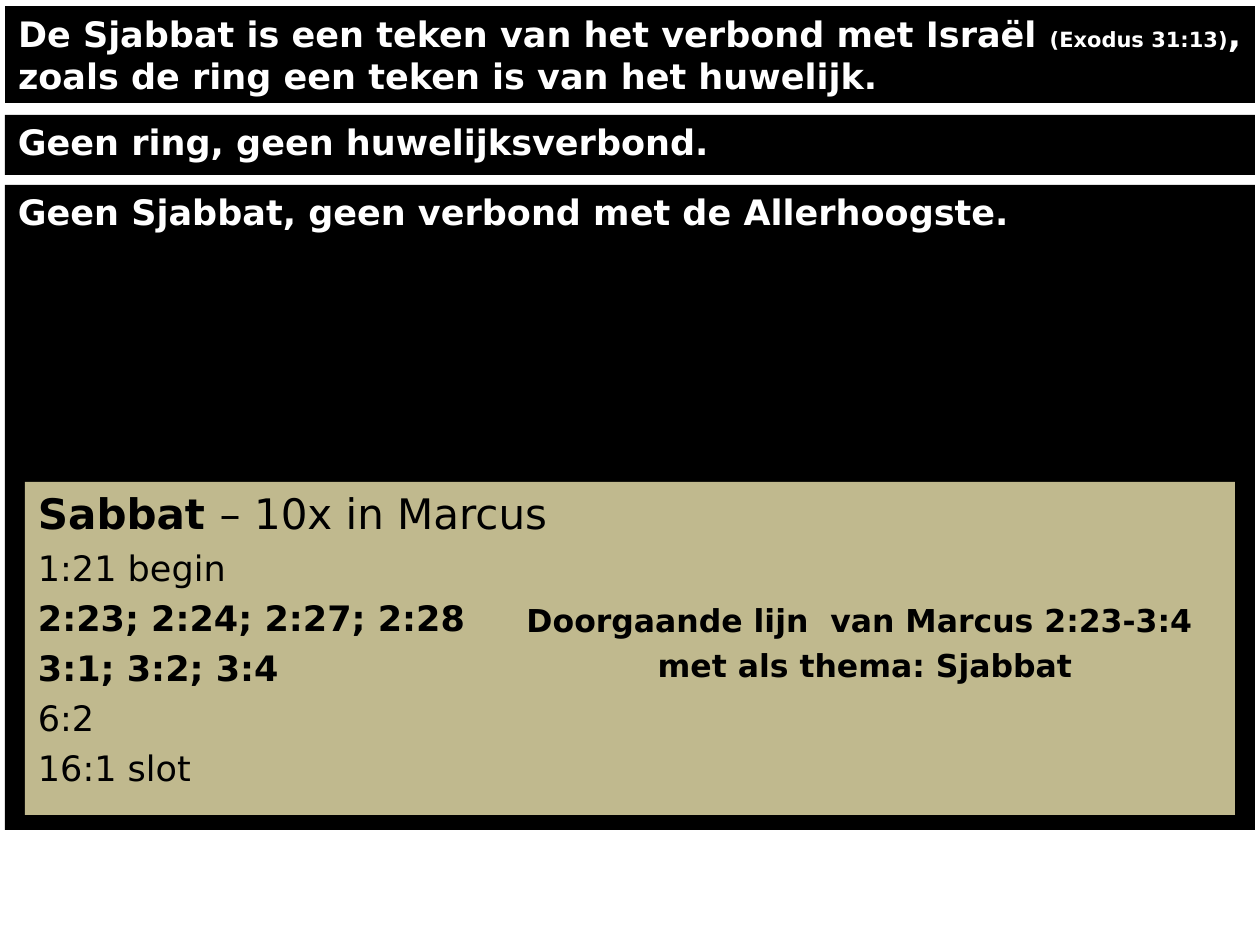
"""Build the slide on the Sabbath as a sign of the covenant."""
from pptx import Presentation
from pptx.dml.color import RGBColor
from pptx.enum.shapes import MSO_SHAPE as Shape
from pptx.enum.text import MSO_ANCHOR as Anchor, MSO_AUTO_SIZE as AutoSize, PP_ALIGN as Align
from pptx.util import Pt

PX = 914400 // 126
FONT = "DejaVu Sans"
BLACK, WHITE, SAND = "000000", "FFFFFF", "C0B98E"
LINE_HEIGHT = 1.16
SPACE_SHARE = 0.2

COVENANT = [[("De Sjabbat is een teken van het verbond met Israël ", 20, True),
             ("(Exodus 31:13)", 12, True),
             (", zoals de ring een teken is van het huwelijk.", 20, True)]]
SABBATH = [[("Geen Sjabbat, geen verbond met de Allerhoogste.", 20, True)]]
RING = [[("Geen ring, geen huwelijksverbond.", 20, True)]]
MARK = [[("Sabbat ", 24, True), ("– 10x in Marcus", 24, False)],
        [("1:21 begin", 20, False)],
        [("2:23; 2:24; 2:27; 2:28", 20, True)],
        [("3:1; 3:2; 3:4", 20, True)],
        [("6:2", 20, False)],
        [("16:1 slot", 20, False)]]
THEME = [[("Doorgaande lijn  van Marcus 2:23-3:4 ", 18, True)],
         [("met als thema: Sjabbat", 18, True)]]

STATEMENT = dict(fill=BLACK, ink=WHITE, right_inset=13)
NOTE = dict(fill=SAND, ink=BLACK, right_inset=0)
PANELS = [
    (SABBATH, (5, 185, 1250, 645), STATEMENT),
    (MARK, (25, 482, 1210, 333), NOTE),
    (THEME, (501, 587, 715, 110), dict(NOTE, align=Align.CENTER, anchor=Anchor.MIDDLE)),
    (RING, (5, 115, 1250, 60), STATEMENT),
]


def color(code):
    """Turn a hex string into a colour."""
    return RGBColor.from_string(code)


def format_panel(panel, paragraphs, place, fill, ink, right_inset,
                 align=Align.LEFT, anchor=Anchor.TOP):
    """Place a panel, fill it and write its paragraphs run by run."""
    panel.left, panel.top, panel.width, panel.height = (n * PX for n in place)
    panel.fill.solid()
    panel.fill.fore_color.rgb = color(fill)
    panel.line.fill.background()
    frame = panel.text_frame
    frame.word_wrap = True
    frame.auto_size = AutoSize.NONE
    frame.vertical_anchor = anchor
    frame.margin_left, frame.margin_right = 13 * PX, right_inset * PX
    frame.margin_top = frame.margin_bottom = 6 * PX
    for index, runs in enumerate(paragraphs):
        paragraph = frame.add_paragraph() if index else frame.paragraphs[0]
        paragraph.alignment = align
        if index:
            paragraph.space_before = Pt(round(runs[0][1] * LINE_HEIGHT * SPACE_SHARE, 1))
        for words, size, bold in runs:
            run = paragraph.add_run()
            run.text = words
            run.font.name = FONT
            run.font.size = Pt(size)
            run.font.bold = bold
            run.font.color.rgb = color(ink)


def main():
    """Create the presentation and save it."""
    deck = Presentation()
    deck.slide_width, deck.slide_height = 1260 * PX, 945 * PX
    slide = deck.slides.add_slide(deck.slide_layouts[5])
    format_panel(slide.shapes.title, COVENANT, (5, 6, 1250, 97), **STATEMENT)
    for paragraphs, place, style in PANELS:
        panel = slide.shapes.add_shape(Shape.RECTANGLE, 0, 0, PX, PX)
        panel.shadow.inherit = False
        format_panel(panel, paragraphs, place, **style)
    deck.save("out.pptx")


if __name__ == "__main__":
    main()
